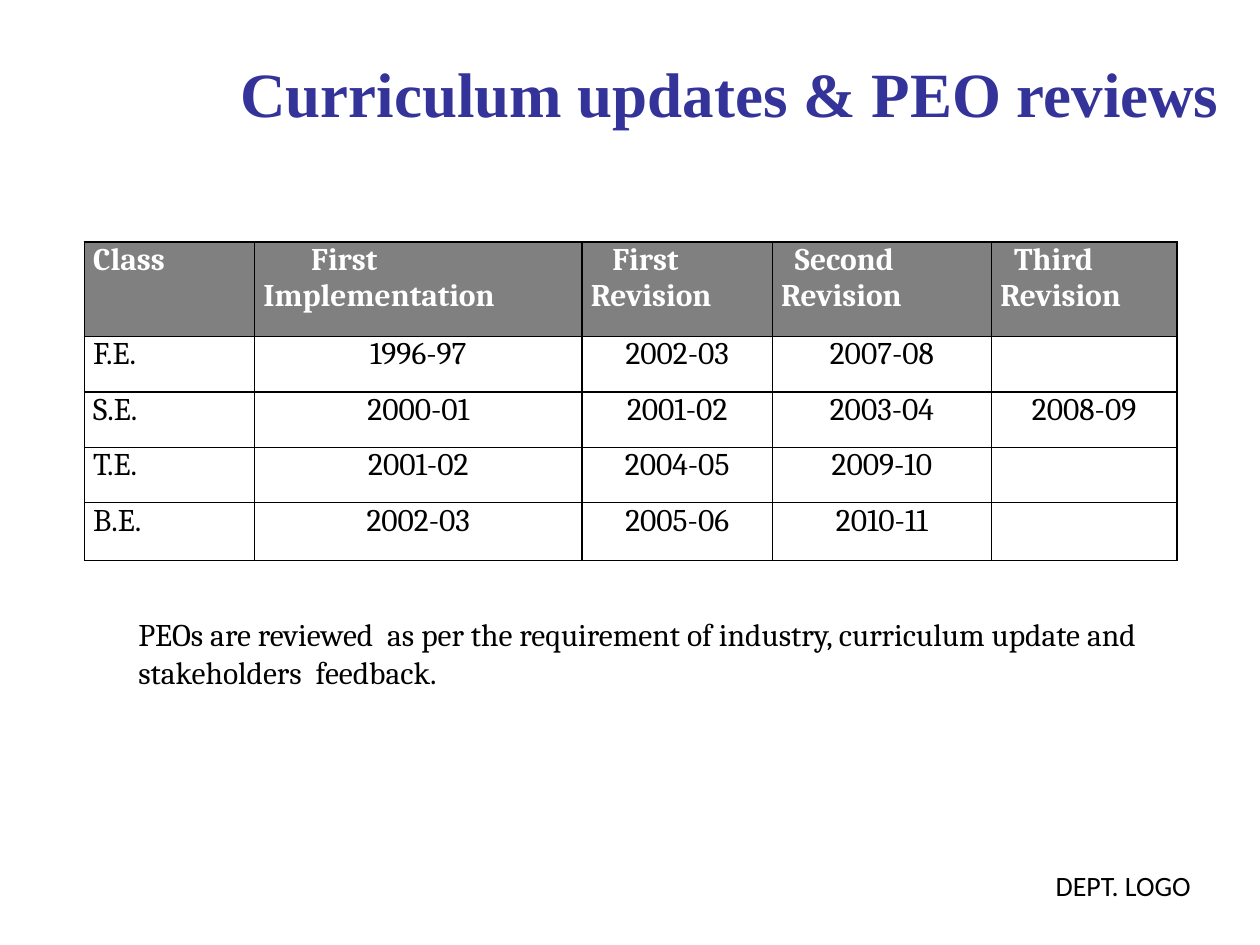
from dataclasses import dataclass

from lxml import etree
from pptx import Presentation
from pptx.dml.color import RGBColor
from pptx.enum.shapes import MSO_SHAPE
from pptx.enum.text import MSO_ANCHOR, PP_ALIGN
from pptx.oxml.ns import qn
from pptx.util import Inches, Pt

RECTANGLE = MSO_SHAPE.RECTANGLE
MIDDLE = MSO_ANCHOR.MIDDLE
TOP = MSO_ANCHOR.TOP
LEFT = PP_ALIGN.LEFT
CENTER = PP_ALIGN.CENTER


@dataclass(frozen=True)
class Theme:
    paper: str = "FFFFFF"
    ink: str = "000000"
    title: str = "333399"
    header: str = "808080"
    title_font: str = "Times New Roman"
    body_font: str = "Cambria"
    label_font: str = "Calibri"
    title_size: int = 36
    body_size: int = 18
    label_size: int = 16
    border: int = 1


THEME = Theme()
SLIDE_WIDTH, SLIDE_HEIGHT = 10, 7.5
CELL_MARGIN = 0.07
COLUMN_WIDTHS = [1.35, 2.6, 1.51, 1.74, 1.47]
ROW_HEIGHTS = [0.75, 0.44, 0.44, 0.44, 0.46]
HEADINGS = ["Class", "First Implementation", "First Revision", "Second Revision", "Third Revision"]
HEADING_INDENTS = [0, 0.38, 0.17, 0.11, 0.11]
REVISIONS = [
    ["F.E.", "1996-97", "2002-03", "2007-08", ""],
    ["S.E.", "2000-01", "2001-02", "2003-04", "2008-09"],
    ["T.E.", "2001-02", "2004-05", "2009-10", ""],
    ["B.E.", "2002-03", "2005-06", "2010-11", ""],
]


def color(value):
    return RGBColor.from_string(value)


def write(frame, text, font, size, ink, align=LEFT, bold=False):
    paragraph = frame.paragraphs[0]
    paragraph.text = text
    paragraph.alignment = align
    paragraph.font.name = font
    paragraph.font.size = Pt(size)
    paragraph.font.bold = bold
    paragraph.font.color.rgb = color(ink)
    return paragraph


def add_text(slide, box, text, font, size, ink, align=LEFT, bold=False, anchor=TOP):
    frame = slide.shapes.add_textbox(*map(Inches, box)).text_frame
    frame.word_wrap = True
    frame.vertical_anchor = anchor
    write(frame, text, font, size, ink, align, bold)


def add_label(slide, text):
    width, height = 2.17, 0.95
    box = SLIDE_WIDTH - width, SLIDE_HEIGHT - height, width, height
    label = slide.shapes.add_shape(RECTANGLE, *map(Inches, box))
    label.shadow.inherit = False
    label.fill.solid()
    label.fill.fore_color.rgb = color(THEME.paper)
    label.line.fill.background()
    label.text_frame.vertical_anchor = MIDDLE
    write(label.text_frame, text, THEME.label_font, THEME.label_size, THEME.ink, CENTER)


def add_borders(cell):
    properties = cell._tc.get_or_add_tcPr()
    for position, side in enumerate(("a:lnL", "a:lnR", "a:lnT", "a:lnB")):
        line = etree.Element(qn(side), w=str(Pt(THEME.border)))
        fill = etree.SubElement(line, qn("a:solidFill"))
        etree.SubElement(fill, qn("a:srgbClr"), val=THEME.ink)
        properties.insert(position, line)


def fill_cell(cell, text, is_header, align, indent):
    cell.margin_left = cell.margin_right = Inches(CELL_MARGIN)
    cell.margin_top = cell.margin_bottom = 0
    cell.vertical_anchor = TOP
    if is_header:
        cell.fill.solid()
        cell.fill.fore_color.rgb = color(THEME.header)
    else:
        cell.fill.background()
    ink = THEME.paper if is_header else THEME.ink
    paragraph = write(cell.text_frame, text, THEME.body_font, THEME.body_size, ink, align, is_header)
    if indent:
        paragraph._p.get_or_add_pPr().set("indent", str(Inches(indent)))
    add_borders(cell)


def add_revision_table(slide, left, top):
    rows = [HEADINGS, *REVISIONS]
    size = sum(COLUMN_WIDTHS), sum(ROW_HEIGHTS)
    table = slide.shapes.add_table(
        len(rows), len(HEADINGS), *map(Inches, (left, top, *size))
    ).table
    for column, width in zip(table.columns, COLUMN_WIDTHS):
        column.width = Inches(width)
    for row, height in zip(table.rows, ROW_HEIGHTS):
        row.height = Inches(height)
    for r, values in enumerate(rows):
        for c, value in enumerate(values):
            is_header = r == 0
            align = LEFT if is_header or c == 0 else CENTER
            indent = HEADING_INDENTS[c] if is_header else 0
            fill_cell(table.cell(r, c), value, is_header, align, indent)


def main():
    presentation = Presentation()
    presentation.slide_width = Inches(SLIDE_WIDTH)
    presentation.slide_height = Inches(SLIDE_HEIGHT)
    slide = presentation.slides.add_slide(presentation.slide_layouts[6])
    add_label(slide, "DEPT. LOGO")
    add_text(slide, (1.67, 0.11, 8.37, 1.25), "Curriculum updates & PEO reviews ",
             THEME.title_font, THEME.title_size, THEME.title, CENTER, True, MIDDLE)
    add_revision_table(slide, 0.67, 1.92)
    add_text(slide, (1, 4.83, 8.17, 0.71),
             "PEOs are reviewed  as per the requirement of industry, "
             "curriculum update and stakeholders  feedback.",
             THEME.body_font, THEME.body_size, THEME.ink)
    presentation.save("out.pptx")


if __name__ == "__main__":
    main()
